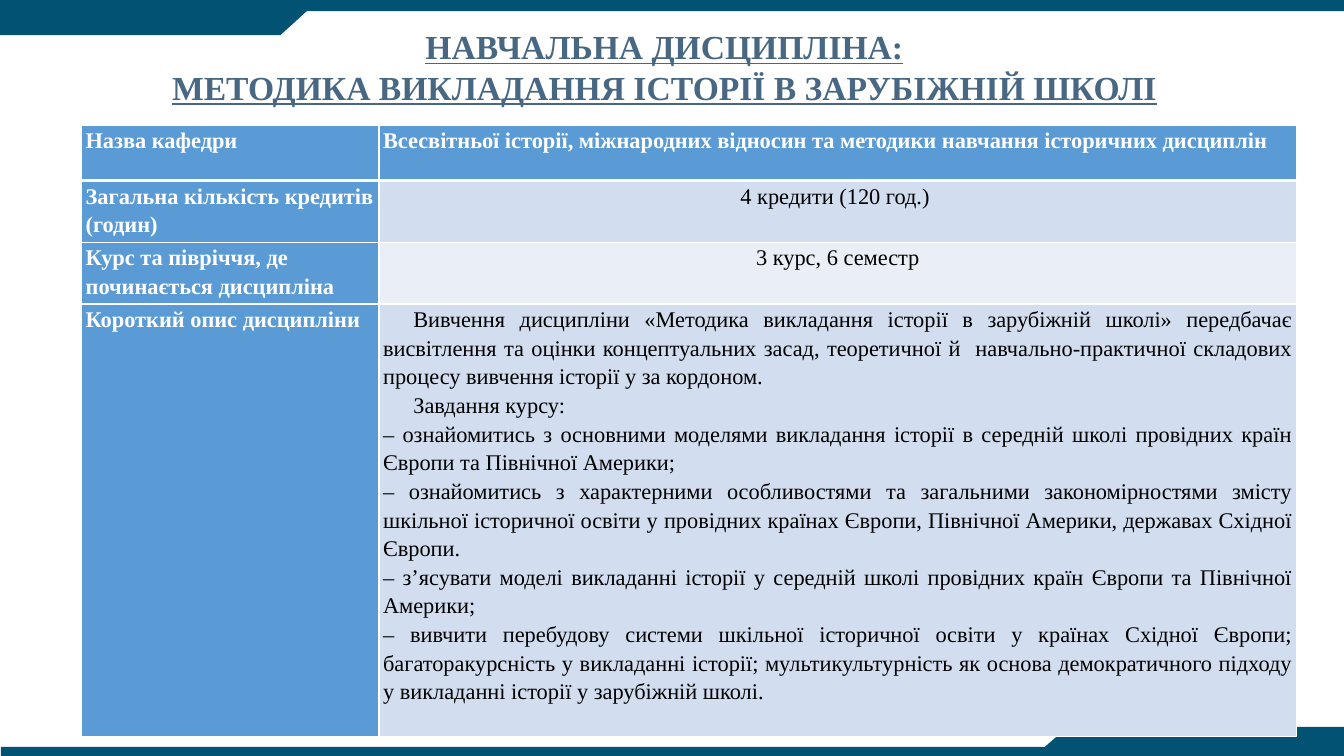
import pptx
import pptx.util
import pptx.dml.color
import pptx.enum.shapes
import pptx.enum.text
import pptx.oxml
import pptx.oxml.ns

Inches = pptx.util.Inches
Pt = pptx.util.Pt
RGBColor = pptx.dml.color.RGBColor
ALIGN = pptx.enum.text.PP_ALIGN
SHAPE = pptx.enum.shapes.MSO_SHAPE

TEAL = RGBColor(0x02, 0x53, 0x73)
SLATE = RGBColor(0x48, 0x67, 0x82)
BLUE = RGBColor(0x5B, 0x9B, 0xD5)
PALE_BLUE = RGBColor(0xD2, 0xDE, 0xEF)
PALER_BLUE = RGBColor(0xEA, 0xEF, 0xF7)
WHITE = RGBColor(0xFF, 0xFF, 0xFF)
BLACK = RGBColor(0, 0, 0)
FONT = "Times New Roman"


def write_paragraphs(frame, lines, paragraph_format, font_format, color):
    for index, line in enumerate(lines):
        paragraph = frame.paragraphs[0] if index == 0 else frame.add_paragraph()
        for name, value in paragraph_format.items():
            setattr(paragraph, name, value)
        run = paragraph.add_run()
        run.text = line
        for name, value in font_format.items():
            setattr(run.font, name, value)
        run.font.color.rgb = color


def add_cell_border(cell, side, points):
    cell._tc.get_or_add_tcPr().append(pptx.oxml.parse_xml(
        f'<a:ln{side} {pptx.oxml.ns.nsdecls("a")} w="{Pt(points)}">'
        f'<a:solidFill><a:srgbClr val="{WHITE}"/></a:solidFill></a:ln{side}>'))


deck = pptx.Presentation()
deck.slide_width = Inches(13.33)
deck.slide_height = Inches(7.5)
slide = deck.slides.add_slide(deck.slide_layouts[6])

# Edge bands with slanted tabs
bands = [
    (SHAPE.RECTANGLE, 0, 0, 13.33, 0.11, 0),
    (SHAPE.RECTANGLE, 0.01, 7.41, 13.32, 0.09, 0),
    (SHAPE.RECTANGLE, 0, 0.05, 2.78, 0.3, 0),
    (SHAPE.FLOWCHART_MERGE, 2.45, 0.05, 0.66, 0.3, 0),
    (SHAPE.RECTANGLE, 10.59, 7.21, 2.74, 0.29, 0),
    (SHAPE.FLOWCHART_MERGE, 10.26, 7.21, 0.66, 0.29, 180),
]
for kind, left, top, width, height, rotation in bands:
    band = slide.shapes.add_shape(
        kind, Inches(left), Inches(top), Inches(width), Inches(height))
    band.rotation = rotation
    band.shadow.inherit = False
    band.fill.solid()
    band.fill.fore_color.rgb = TEAL
    band.line.fill.background()

# Title
title = slide.shapes.add_textbox(
    Inches(0.56), Inches(0.21), Inches(12.06), Inches(0.91)).text_frame
title.word_wrap = True
write_paragraphs(
    title,
    ["НАВЧАЛЬНА ДИСЦИПЛІНА:", "МЕТОДИКА ВИКЛАДАННЯ ІСТОРІЇ В ЗАРУБІЖНІЙ ШКОЛІ"],
    {"alignment": ALIGN.CENTER},
    {"name": FONT, "size": Pt(24), "bold": True, "underline": True}, SLATE)

# Course table: label, details, details fill, details alignment
course_rows = [
    ("Назва кафедри",
     ["Всесвітньої історії, міжнародних відносин та методики навчання історичних дисциплін"],
     BLUE, ALIGN.LEFT),
    ("Загальна кількість кредитів (годин)", ["4 кредити (120 год.) "],
     PALE_BLUE, ALIGN.CENTER),
    ("Курс та півріччя, де починається дисципліна", ["3 курс, 6 семестр"],
     PALER_BLUE, ALIGN.CENTER),
    ("Короткий опис дисципліни",
     ["Вивчення дисципліни «Методика викладання історії в зарубіжній школі» передбачає "
      "висвітлення та оцінки концептуальних засад, теоретичної й  навчально-практичної "
      "складових процесу вивчення історії у за кордоном.",
      "Завдання курсу:",
      "– ознайомитись з основними моделями викладання історії в середній школі "
      "провідних країн Європи та Північної Америки;",
      "– ознайомитись з характерними особливостями та загальними закономірностями "
      "змісту шкільної історичної освіти у провідних країнах Європи, Північної Америки, "
      "державах Східної Європи.",
      "– з’ясувати моделі викладанні історії у середній школі провідних країн Європи "
      "та Північної Америки;",
      "– вивчити перебудову системи шкільної історичної освіти у країнах Східної Європи; "
      "багаторакурсність у викладанні історії; мультикультурність як основа "
      "демократичного підходу у викладанні історії у зарубіжній школі."],
     PALE_BLUE, ALIGN.JUSTIFY),
]
column_widths = [2.95, 9.1]
row_heights = [0.55, 0.6, 0.61, 4.29]
course = slide.shapes.add_table(
    len(row_heights), len(column_widths), Inches(0.81), Inches(1.24),
    Inches(sum(column_widths)), Inches(sum(row_heights))).table
for column, width in zip(course.columns, column_widths):
    column.width = Inches(width)
for row, height in zip(course.rows, row_heights):
    row.height = Inches(height)

cell_margins = {"margin_left": Inches(0.04), "margin_right": Inches(0.04),
                "margin_top": 0, "margin_bottom": 0}
for row_index, (label, details, details_fill, alignment) in enumerate(course_rows):
    contents = [([label], BLUE, ALIGN.LEFT), (details, details_fill, alignment)]
    for column_index, (lines, fill, align) in enumerate(contents):
        cell = course.cell(row_index, column_index)
        for name, value in cell_margins.items():
            setattr(cell, name, value)
        for side in "LRTB":
            at_header_edge = (row_index, side) in [(0, "B"), (1, "T")]
            add_cell_border(cell, side, 3 if at_header_edge else 1)
        cell.fill.solid()
        cell.fill.fore_color.rgb = fill
        on_blue = fill == BLUE
        write_paragraphs(
            cell.text_frame, lines, {"alignment": align, "line_spacing": 1.15},
            {"name": FONT, "size": Pt(16), "bold": on_blue},
            WHITE if on_blue else BLACK)

# First-line indent for the two introductory paragraphs of the description
for paragraph in course.cell(3, 1).text_frame.paragraphs[:2]:
    paragraph._p.get_or_add_pPr().set("indent", str(Inches(0.3)))

deck.save("out.pptx")
